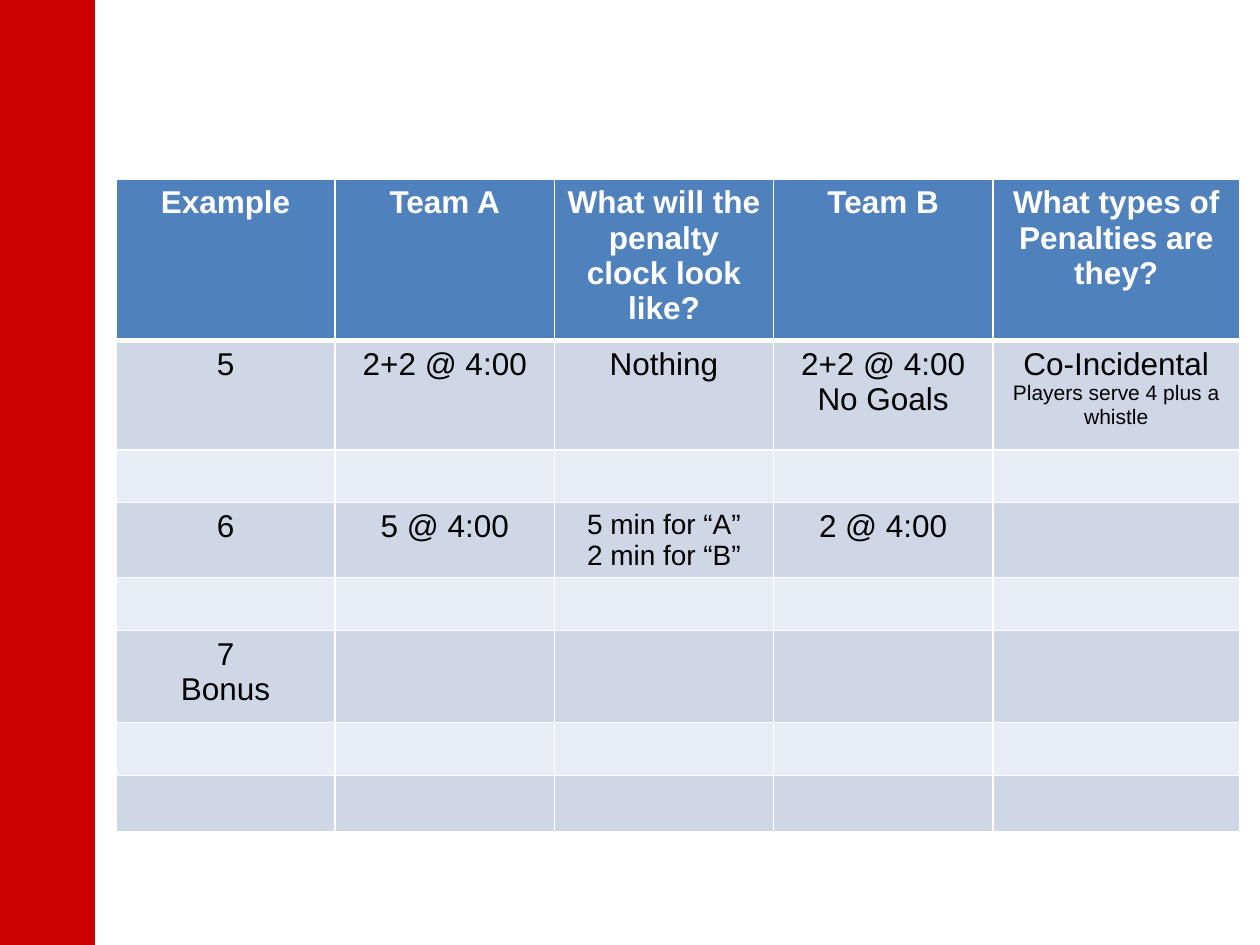
from dataclasses import dataclass

import pptx
import pptx.dml.color
import pptx.enum.shapes
import pptx.enum.text
import pptx.oxml
import pptx.oxml.ns
import pptx.util
from pptx.dml.color import RGBColor
from pptx.util import Inches

RED = RGBColor(0xCC, 0x00, 0x00)
BLUE = RGBColor(0x4F, 0x81, 0xBD)
BAND_DARK = RGBColor(0xCF, 0xD7, 0xE7)
BAND_LIGHT = RGBColor(0xE8, 0xEC, 0xF4)
WHITE = RGBColor(0xFF, 0xFF, 0xFF)
BLACK = RGBColor(0x00, 0x00, 0x00)


@dataclass(frozen=True)
class Line:
    text: str
    size: int = 18


@dataclass(frozen=True)
class Row:
    height: float
    cells: tuple[tuple[Line, ...], ...] = ()


COLUMN_WIDTHS = (1.74, 1.74, 1.74, 1.74, 1.96)
ROWS = (
    Row(1.28, (
        (Line("Example"),),
        (Line("Team A"),),
        (Line("What will the penalty clock look like?"),),
        (Line("Team B"),),
        (Line("What types of Penalties are they?"),),
    )),
    Row(0.87, (
        (Line("5"),),
        (Line("2+2 @ 4:00"),),
        (Line("Nothing"),),
        (Line("2+2 @ 4:00"), Line("No Goals")),
        (Line("Co-Incidental"), Line("Players serve 4 plus a whistle", 12)),
    )),
    Row(0.42),
    Row(0.42, (
        (Line("6"),),
        (Line("5 @ 4:00"),),
        (Line("5 min for “A”", 16), Line("2 min for “B”", 16)),
        (Line("2 @ 4:00"),),
    )),
    Row(0.42),
    Row(0.73, ((Line("7"), Line("Bonus")),)),
    Row(0.42),
    Row(0.45),
)


def add_side_band(s: pptx.slide.Slide) -> None:
    sp = s.shapes.add_shape(
        pptx.enum.shapes.MSO_SHAPE.RECTANGLE, 0, 0, Inches(0.75), Inches(7.5)
    )
    sp.shadow.inherit = False
    sp.fill.solid()
    sp.fill.fore_color.rgb = RED
    sp.line.color.rgb = RED
    sp.line.width = pptx.util.Pt(0.75)


def set_borders(cell: pptx.table._Cell, top: float, bottom: float) -> None:
    tc_pr = cell._tc.get_or_add_tcPr()
    for side, width in (("L", 1), ("R", 1), ("T", top), ("B", bottom)):
        tc_pr.append(pptx.oxml.parse_xml(
            f'<a:ln{side} {pptx.oxml.ns.nsdecls("a")} w="{pptx.util.Pt(width)}">'
            f'<a:solidFill><a:srgbClr val="{WHITE}"/></a:solidFill></a:ln{side}>'
        ))


def write_lines(
    cell: pptx.table._Cell, lines: tuple[Line, ...], color: RGBColor, bold: bool
) -> None:
    tf = cell.text_frame
    for i, line in enumerate(lines):
        p = tf.add_paragraph() if i else tf.paragraphs[0]
        p.text = line.text
        p.alignment = pptx.enum.text.PP_ALIGN.CENTER
        p.font.name = "Arial"
        p.font.size = pptx.util.Pt(line.size)
        p.font.bold = bold
        p.font.color.rgb = color


def add_penalty_table(s: pptx.slide.Slide) -> None:
    table = s.shapes.add_table(
        len(ROWS), len(COLUMN_WIDTHS), Inches(0.92), Inches(1.42),
        Inches(sum(COLUMN_WIDTHS)), Inches(sum(row.height for row in ROWS)),
    ).table
    for column, width in zip(table.columns, COLUMN_WIDTHS):
        column.width = Inches(width)
    for r, row in enumerate(ROWS):
        header = r == 0
        fill = BLUE if header else BAND_DARK if r % 2 else BAND_LIGHT
        table.rows[r].height = Inches(row.height)
        for c, cell in enumerate(table.rows[r].cells):
            set_borders(cell, 3 if r == 1 else 1, 3 if header else 1)
            cell.fill.solid()
            cell.fill.fore_color.rgb = fill
            if c < len(row.cells):
                write_lines(cell, row.cells[c], WHITE if header else BLACK, header)


def main() -> None:
    prs = pptx.Presentation()
    prs.slide_width, prs.slide_height = Inches(10), Inches(7.5)
    s = prs.slides.add_slide(prs.slide_layouts[6])
    add_side_band(s)
    add_penalty_table(s)
    prs.save("out.pptx")


if __name__ == "__main__":
    main()
